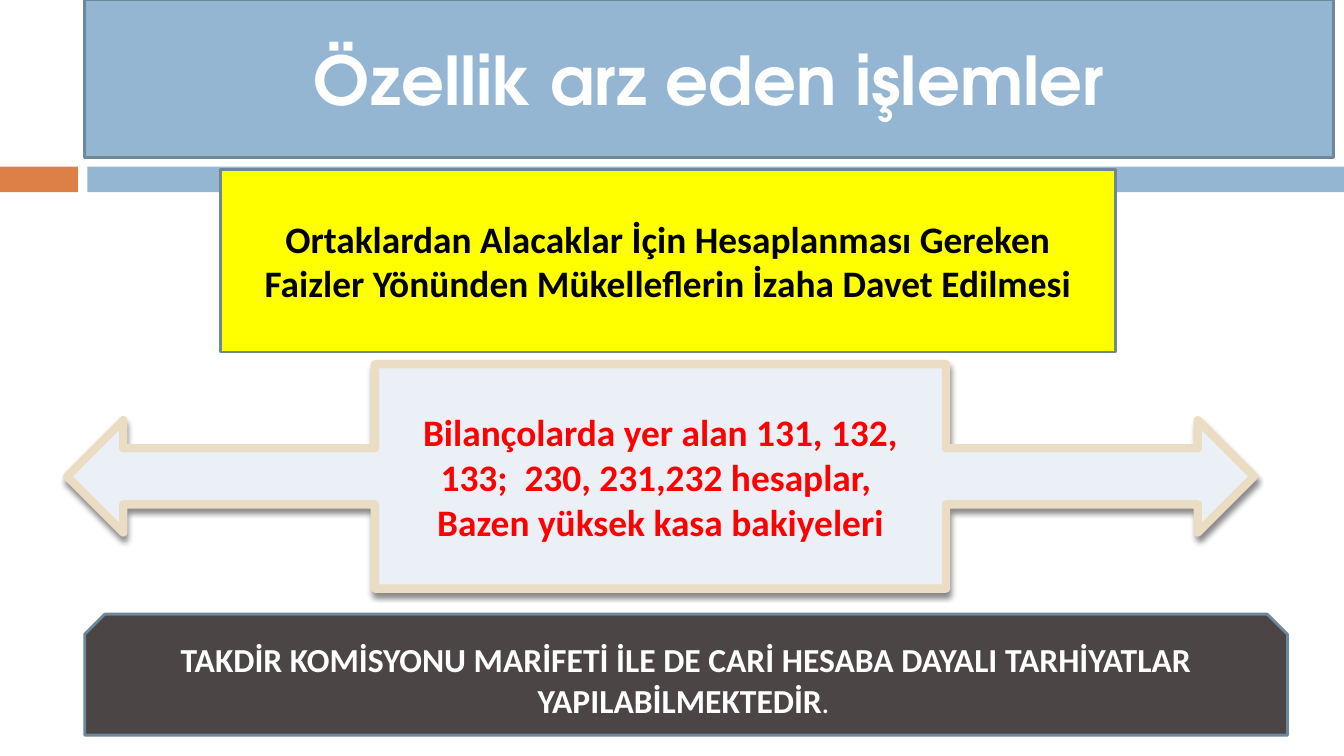
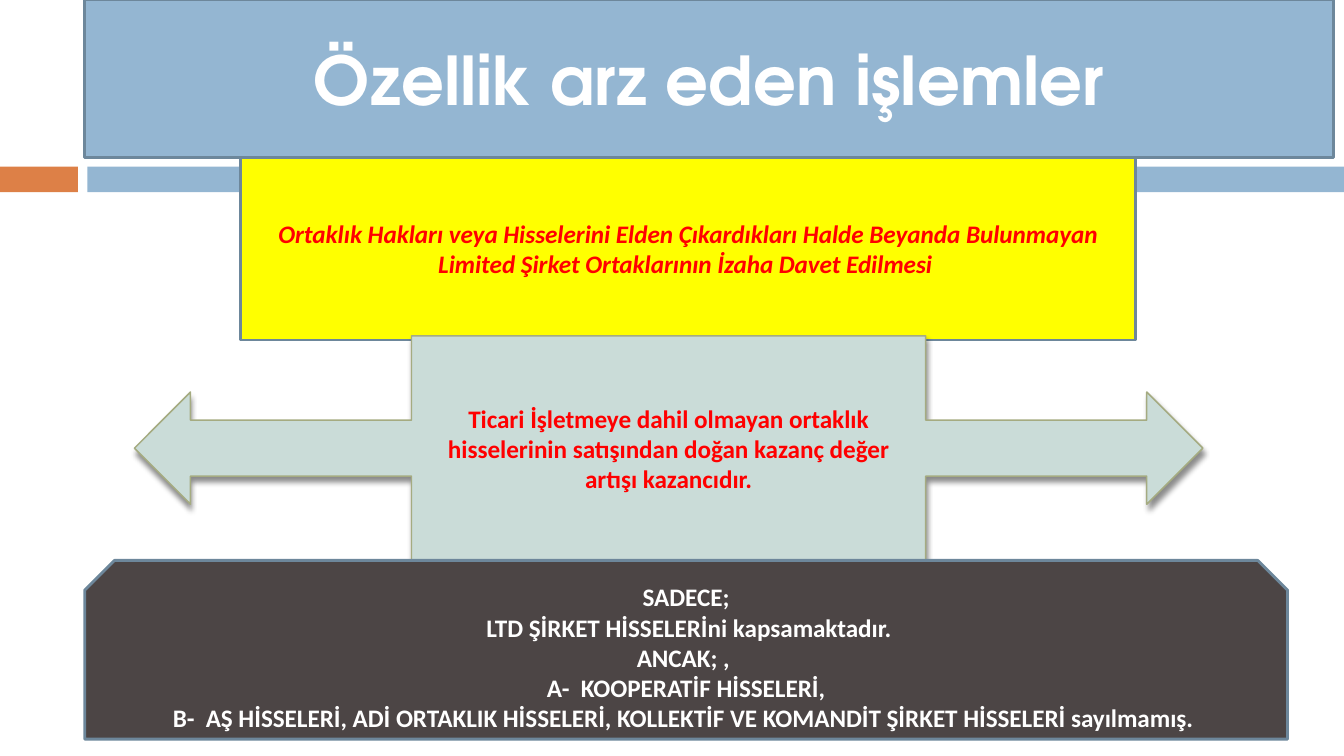
from lxml import etree
from pptx import Presentation
from pptx.dml.color import RGBColor
from pptx.enum import shapes, text
from pptx.oxml.ns import qn
from pptx.util import Inches, Pt

KIND = shapes.MSO_SHAPE


class Theme:
    blue, orange, edge = "94B6D2", "DD8047", "6D879B"
    yellow, dark = "FFFF00", "4C4545"
    white, black, red = "FFFFFF", "000000", "FF0000"
    head, body = "TeX Gyre Adventor", "Calibri"
    title, large, medium, small = 36, 20, 18, 13.5
    rule = 1.5


WIDTH = Inches(10)
HEIGHT = WIDTH * 9 // 16

TITLE = "Özellik arz eden işlemler"
TITLE_BOX = (0.63, 0, 9.29, 1.17)
BANDS = [((0, 1.24, 0.58, 0.19), Theme.orange),
         ((0.65, 1.24, 9.35, 0.19), Theme.blue)]

# Each paragraph is a list of runs.
SLIDES = [
    {
        "topic": dict(
            box=(1.64, 1.26, 6.66, 1.36), size=Theme.large, color=Theme.black,
            paras=[["Ortaklardan Alacaklar İçin Hesaplanması Gereken Faizler "
                    "Yönünden Mükelleflerin İzaha Davet Edilmesi"]]),
        "callout": dict(
            box=(0.5, 2.71, 8.83, 1.67), size=Theme.large,
            fill="EAF0F6", line="EBDDC3", width=4.5,
            paras=[["Bilançolarda yer alan 131, 132, 133;  230, 231,232 hesaplar, "],
                   ["Bazen yüksek kasa bakiyeleri"]]),
        "note": dict(
            box=(0.63, 4.57, 8.95, 0.9), size=Theme.medium,
            paras=[["TAKDİR KOMİSYONU MARİFETİ İLE DE CARİ HESABA DAYALI "
                    "TARHİYATLAR YAPILABİLMEKTEDİR", ". "]]),
    },
    {
        "topic": dict(
            box=(1.79, 1.17, 6.66, 1.36), size=Theme.small, color=Theme.red,
            italic=True,
            paras=[["Ortaklık Hakları veya Hisselerini Elden Çıkardıkları Halde "
                    "Beyanda Bulunmayan Limited Şirket Ortaklarının İzaha Davet "
                    "Edilmesi "]]),
        "callout": dict(
            box=(1, 2.5, 7.95, 1.67), size=Theme.small,
            fill="CADCD8", line="A5AB81", width=0.79,
            paras=[["Ticari İşletmeye dahil olmayan ortaklık hisselerinin "
                    "satışından doğan kazanç değer artışı kazancıdır."]]),
        "note": dict(
            box=(0.63, 4.17, 8.95, 1.33), size=Theme.small,
            paras=[["SADECE;"],
                   [" LTD ŞİRKET HİSSELERİni kapsamaktadır."],
                   ["ANCAK; , "],
                   ["A-  KOOPERATİF HİSSELERİ,"],
                   ["B-  AŞ HİSSELERİ, ADİ ORTAKLIK HİSSELERİ, KOLLEKTİF VE "
                    "KOMANDİT ŞİRKET HİSSELERİ sayılmamış. "]]),
    },
]

# Looks shared by every part of the same kind.
PARTS = {
    "topic": dict(kind=KIND.FLOWCHART_PROCESS, fill=Theme.yellow),
    "callout": dict(kind=KIND.LEFT_RIGHT_ARROW_CALLOUT, color=Theme.red, shade=True),
    "note": dict(kind=KIND.SNIP_2_SAME_RECTANGLE, fill=Theme.dark),
}


def rgb(code):
    return RGBColor.from_string(code)


def paint(shape, fill, line=None, width=Theme.rule):
    shape.fill.solid()
    shape.fill.fore_color.rgb = rgb(fill)
    if line:
        shape.line.color.rgb = rgb(line)
        shape.line.width = Pt(width)
    else:
        shape.line.fill.background()


def write(shape, paras, size, color=Theme.white, font=Theme.body, italic=False):
    """Fill the shape with bold centred text; runs after the first are small."""
    frame = shape.text_frame
    frame.word_wrap = True
    frame.auto_size = text.MSO_AUTO_SIZE.NONE
    frame.vertical_anchor = text.MSO_ANCHOR.MIDDLE
    for i, runs in enumerate(paras):
        para = frame.add_paragraph() if i else frame.paragraphs[0]
        para.alignment = text.PP_ALIGN.CENTER
        for j, words in enumerate(runs):
            run = para.add_run()
            run.text = words
            run.font.name = font
            run.font.size = Pt(Theme.small if j else size)
            run.font.bold = True
            run.font.italic = italic
            run.font.color.rgb = rgb(color)


def cast(shape):
    """Give the shape a soft shadow straight below it."""
    effects = shape.element.spPr.find(qn("a:effectLst"))
    drop = etree.SubElement(effects, qn("a:outerShdw"), blurRad=str(Pt(3)),
                            dist=str(Pt(2.4)), dir="5400000", rotWithShape="0")
    tint = etree.SubElement(drop, qn("a:srgbClr"), val=Theme.black)
    etree.SubElement(tint, qn("a:alpha"), val="45000")


def add(slide, kind, box, fill, line=None, width=Theme.rule):
    shape = slide.shapes.add_shape(kind, *map(Inches, box))
    shape.shadow.inherit = False
    paint(shape, fill, line, width)
    return shape


def part(slide, kind, box, fill, paras, size, line=Theme.edge,
         width=Theme.rule, shade=False, **style):
    shape = add(slide, kind, box, fill, line, width)
    write(shape, paras, size, **style)
    if shade:
        cast(shape)


def frame(slide):
    """Set the title and the bands that all slides share."""
    title = slide.shapes.title
    title.left, title.top, title.width, title.height = map(Inches, TITLE_BOX)
    paint(title, Theme.blue, Theme.edge)
    write(title, [[TITLE]], Theme.title, font=Theme.head)
    for box, fill in BANDS:
        add(slide, KIND.RECTANGLE, box, fill)


def main():
    deck = Presentation()
    deck.slide_width, deck.slide_height = WIDTH, HEIGHT
    for data in SLIDES:
        slide = deck.slides.add_slide(deck.slide_layouts[5])
        frame(slide)
        for name, look in PARTS.items():
            part(slide, **look, **data[name])
    deck.save("out.pptx")


if __name__ == "__main__":
    main()
